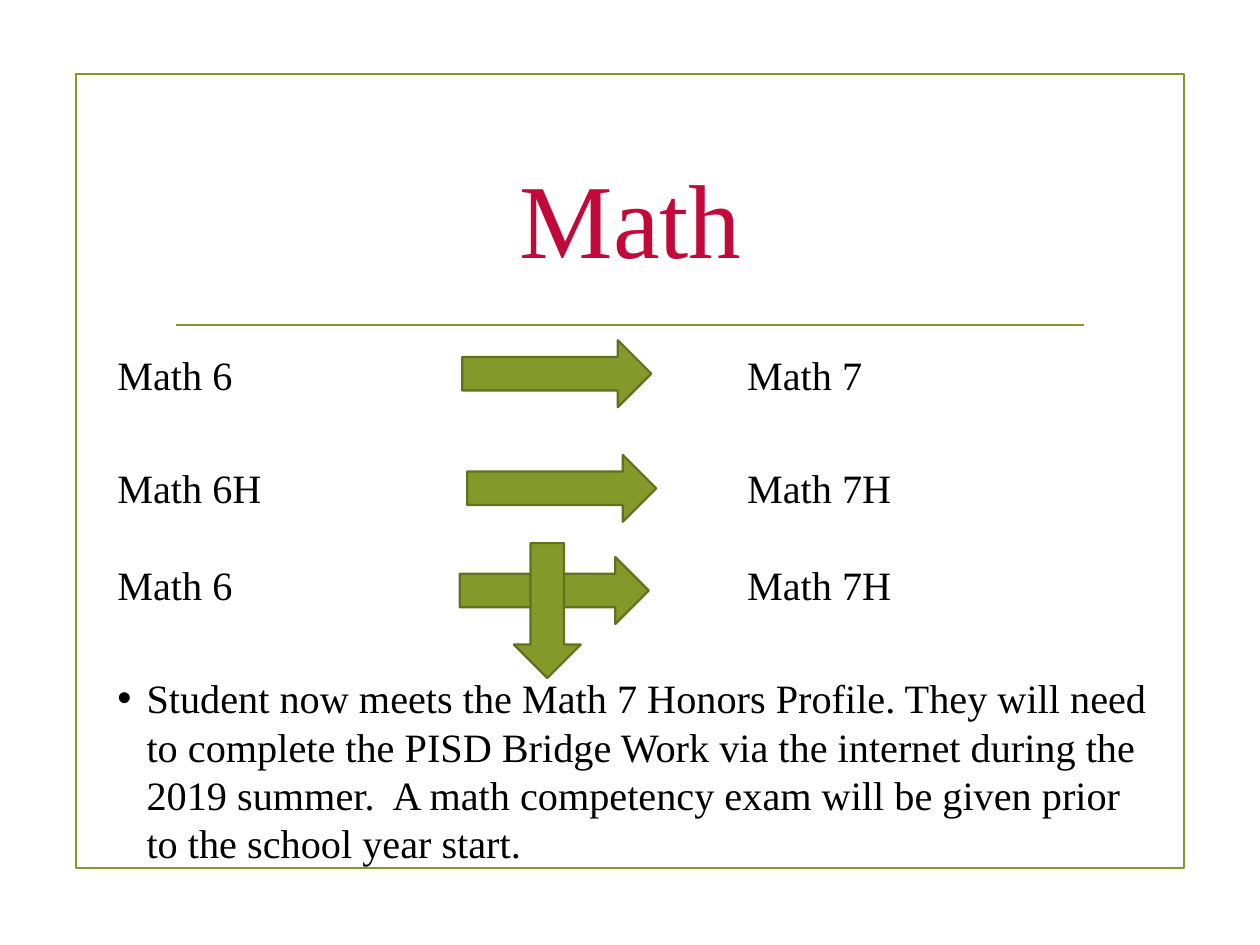
from lxml.etree import SubElement
from pptx import Presentation
from pptx.dml.color import RGBColor
from pptx.enum.shapes import MSO_CONNECTOR, MSO_SHAPE
from pptx.enum.text import MSO_ANCHOR, MSO_AUTO_SIZE, PP_ALIGN
from pptx.oxml.ns import qn
from pptx.util import Cm, Pt

GREEN = RGBColor(0x83, 0x99, 0x2A)
DARK_GREEN = RGBColor(0x61, 0x71, 0x1F)
CRIMSON = RGBColor(0xC2, 0x0A, 0x3A)
BLACK = RGBColor(0x00, 0x00, 0x00)
FONT = "Times New Roman"
LINE_WIDTH = Pt(1.25)

CURRENT_COURSES = ["Math 6", "Math 6H", "Math 6"]
NEXT_COURSES = ["Math 7", "Math 7H", "Math 7H"]
COURSE_GAPS = [0, 37, 28]
NOTE = (
    "Student now meets the Math 7 Honors Profile. They will need to complete "
    "the PISD Bridge Work via the internet during the 2019 summer.  A math "
    "competency exam will be given prior to the school year start."
)
RIGHT_ARROWS = [(7.21, -0.07), (7.31, 2.24), (7.16, 4.3)]
ARROW_LENGTH, ARROW_BREADTH = 3.81, 1.35


def place(shape, left, top, width, height):
    """Move and size a shape, in centimetres."""
    shape.left, shape.top = Cm(left), Cm(top)
    shape.width, shape.height = Cm(width), Cm(height)


def write(paragraph, text, *, size=23, color=BLACK, align=PP_ALIGN.LEFT,
          before=0, leading=None, bullet=None, hanging=0):
    """Fill a paragraph with formatted text."""
    properties = paragraph._p.get_or_add_pPr()
    properties.set("marL", str(Cm(hanging)))
    properties.set("indent", str(-Cm(hanging)))
    if bullet:
        SubElement(properties, qn("a:buChar"), char=bullet)
    else:
        SubElement(properties, qn("a:buNone"))
    paragraph.alignment = align
    paragraph.space_before = Pt(before)
    paragraph.space_after = Pt(0)
    if leading:
        paragraph.line_spacing = Pt(leading)
    run = paragraph.add_run()
    run.text = text
    run.font.name, run.font.size = FONT, Pt(size)
    run.font.color.rgb = color


def add_frame(slide, left, top, width, height):
    """Draw the border and the rule under the title, behind the text."""
    border = slide.shapes.add_shape(
        MSO_SHAPE.RECTANGLE, Cm(left), Cm(top), Cm(width), Cm(height))
    border.shadow.inherit = False
    border.fill.background()
    rule_top = Cm(top + 5.05)
    rule = slide.shapes.add_connector(
        MSO_CONNECTOR.STRAIGHT, Cm(left + 2.01), rule_top, Cm(left + width - 2.01), rule_top)
    SubElement(rule._element.spPr, qn("a:effectLst"))
    for position, shape in enumerate((border, rule), start=2):
        shape.line.color.rgb = GREEN
        shape.line.width = LINE_WIDTH
        slide.shapes._spTree.insert(position, shape._element)


def add_title(slide, left, top, width, height):
    """Set the slide title."""
    title = slide.shapes.title
    place(title, left, top, width, height)
    title.text_frame.vertical_anchor = MSO_ANCHOR.MIDDLE
    write(title.text_frame.paragraphs[0], "Math", size=60, color=CRIMSON,
          align=PP_ALIGN.CENTER)


def write_courses(frame, courses):
    """List one column of courses from the top of a text frame."""
    frame.word_wrap = True
    frame.auto_size = MSO_AUTO_SIZE.NONE
    frame.vertical_anchor = MSO_ANCHOR.TOP
    for index, (course, gap) in enumerate(zip(courses, COURSE_GAPS)):
        paragraph = frame.add_paragraph() if index else frame.paragraphs[0]
        write(paragraph, course, before=gap, leading=27.6)


def add_courses(slide, left, top, width, height):
    """Set the current courses with the note below, and the next courses beside."""
    body = slide.placeholders[1]
    place(body, left, top, width, height)
    write_courses(body.text_frame, CURRENT_COURSES)
    write(body.text_frame.add_paragraph(), NOTE, before=37, leading=27.6,
          bullet="•", hanging=0.59)
    column = slide.shapes.add_textbox(
        Cm(left + 12.7), Cm(top), Cm(width - 12.7), Cm(5.6))
    write_courses(column.text_frame, NEXT_COURSES)


def add_arrow(slide, kind, left, top, width, height):
    """Draw one green block arrow."""
    arrow = slide.shapes.add_shape(kind, Cm(left), Cm(top), Cm(width), Cm(height))
    arrow.shadow.inherit = False
    arrow.fill.solid()
    arrow.fill.fore_color.rgb = GREEN
    arrow.line.color.rgb = DARK_GREEN
    arrow.line.width = LINE_WIDTH


def add_arrows(slide, left, top):
    """Draw the arrows that join the courses and point to the note."""
    for across, down in RIGHT_ARROWS:
        add_arrow(slide, MSO_SHAPE.RIGHT_ARROW, left + across, top + down,
                  ARROW_LENGTH, ARROW_BREADTH)
    add_arrow(slide, MSO_SHAPE.DOWN_ARROW, left + 8.25, top + 4.02, ARROW_BREADTH, 2.72)


def main():
    """Build and save the slide."""
    presentation = Presentation()
    presentation.slide_width, presentation.slide_height = Cm(25.4), Cm(19.05)
    slide = presentation.slides.add_slide(presentation.slide_layouts[1])
    add_frame(slide, 1.53, 1.5, 22.34, 16)
    add_title(slide, 3.26, 2.54, 18.9, 3.63)
    add_courses(slide, 2.11, 6.93, 21.39, 11.96)
    add_arrows(slide, 2.11, 6.93)
    presentation.save("out.pptx")


if __name__ == "__main__":
    main()
